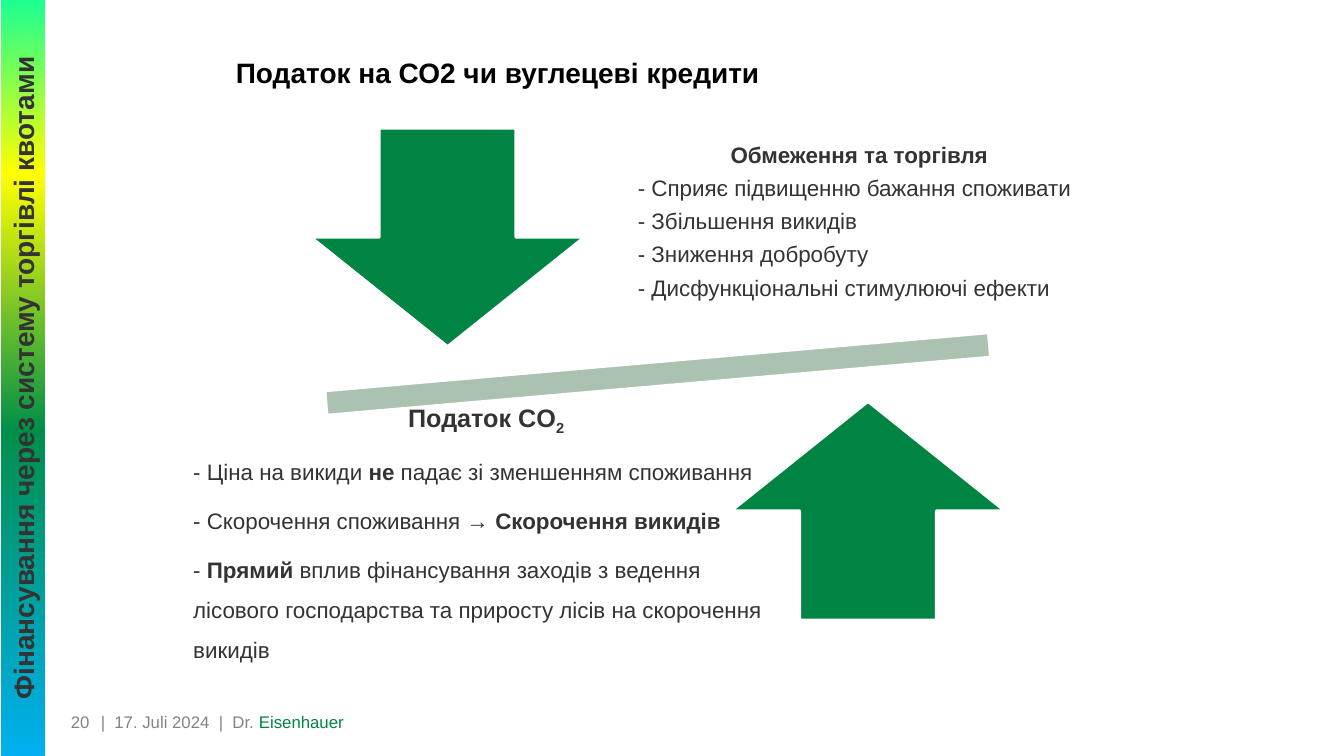
from copy import deepcopy

from pptx import Presentation
from pptx.dml.color import RGBColor
from pptx.enum.shapes import MSO_SHAPE as Shape
from pptx.enum.text import MSO_ANCHOR as Anchor, PP_ALIGN as Align
from pptx.oxml.ns import qn
from pptx.util import Pt

BLACK = RGBColor(0x00, 0x00, 0x00)
WHITE = RGBColor(0xFF, 0xFF, 0xFF)
DARK = RGBColor(0x33, 0x33, 0x33)
GREY = RGBColor(0x82, 0x84, 0x80)
GREEN = RGBColor(0x00, 0x84, 0x44)
SAGE = RGBColor(0xAB, 0xC2, 0xB0)
SIDEBAR_STOPS = [
    (0, RGBColor(0x00, 0xB0, 0xF0)),
    (0.43, RGBColor(0x00, 0x8F, 0x4A)),
    (0.77, RGBColor(0xFF, 0xFF, 0x00)),
    (1, RGBColor(0x1C, 0xFF, 0x91)),
]
SLIDE_WIDTH, SLIDE_HEIGHT = 960, 540

TRADE_LINES = [
    "- Сприяє підвищенню бажання споживати",
    "- Збільшення викидів",
    "- Зниження добробуту",
    "- Дисфункціональні стимулюючі ефекти",
]
TAX_LINES = [
    [("- Ціна на викиди ", False), ("не", True),
     (" падає зі зменшенням споживання", False)],
    [("- Скорочення споживання → ", False), ("Скорочення викидів", True)],
    [("- ", False), ("Прямий ", True),
     ("вплив фінансування заходів з ведення лісового господарства "
      "та приросту лісів на скорочення викидів", False)],
]


def add_span(para, text, size, color, bold=False):
    """Append a formatted run to a paragraph and return it."""
    span = para.add_run()
    span.text = text
    span.font.name = "Arial"
    span.font.size = Pt(size)
    span.font.bold = bold
    span.font.color.rgb = color
    return span


def add_text_box(page, box, anchor=Anchor.MIDDLE, inset=0):
    """Add an empty wrapping text box and return its frame."""
    frame = page.shapes.add_textbox(*map(Pt, box)).text_frame
    frame.word_wrap = True
    frame.vertical_anchor = anchor
    frame.margin_left = frame.margin_right = Pt(inset)
    frame.margin_top = frame.margin_bottom = Pt(inset)
    return frame


def space_paragraphs(frame, line_spacing, after):
    """Give all paragraphs of a frame the same spacing."""
    for para in frame.paragraphs:
        para.line_spacing = line_spacing
        para.space_after = Pt(after)


def add_filled_shape(page, kind, box, color, rotation=0):
    """Add a flat shape with a white outline."""
    shape = page.shapes.add_shape(kind, *map(Pt, box))
    shape.shadow.inherit = False
    shape.rotation = rotation
    shape.fill.solid()
    shape.fill.fore_color.rgb = color
    shape.line.color.rgb = WHITE
    shape.line.width = Pt(2)


def add_title(page, box):
    """Add the slide title."""
    para = add_text_box(page, box, Anchor.BOTTOM).paragraphs[0]
    add_span(para, "Податок на СО2 чи вуглецеві кредити", 20, BLACK, True)


def add_balance(page, box):
    """Add the tilted beam with an arrow pressing on each side."""
    left, top, width, height = box
    arrow_width, arrow_height = 195, 156
    beam_height = 74
    beam = (left, top + (height - beam_height) / 2, width, beam_height)
    down = (left + 76, top, arrow_width, arrow_height)
    up = (left + width - 76 - arrow_width, top + height - arrow_height,
          arrow_width, arrow_height)
    add_filled_shape(page, Shape.MATH_MINUS, beam, SAGE, 355)
    add_filled_shape(page, Shape.DOWN_ARROW, down, GREEN)
    add_filled_shape(page, Shape.UP_ARROW, up, GREEN)


def add_trade_panel(page, box):
    """Add the cap-and-trade arguments."""
    frame = add_text_box(page, box, inset=8.64)
    heading = frame.paragraphs[0]
    heading.alignment = Align.CENTER
    add_span(heading, "Обмеження та торгівля", 16, DARK, True)
    for line in TRADE_LINES:
        add_span(frame.add_paragraph(), line, 16, DARK)
    space_paragraphs(frame, 0.9, 6.4)


def add_tax_panel(page, box):
    """Add the carbon tax arguments."""
    frame = add_text_box(page, box, inset=10)
    heading = frame.paragraphs[0]
    heading.alignment = Align.CENTER
    add_span(heading, "Податок CO", 18, DARK, True)
    subscript = add_span(heading, "2", 18, DARK, True)
    subscript._r.get_or_add_rPr().set("baseline", "-25000")
    for line in TAX_LINES:
        para = frame.add_paragraph()
        for text, bold in line:
            add_span(para, text, 16, DARK, bold)
    space_paragraphs(frame, 1.5, 6)


def add_footer(page, box):
    """Add the page number, date and author."""
    left, top, width, height = box
    number = add_text_box(page, (left, top, 64, height)).paragraphs[0]
    number.alignment = Align.RIGHT
    add_span(number, "20", 12, GREY)
    author = add_text_box(page, (left + 72, top, width - 72, height)).paragraphs[0]
    add_span(author, "|  17. Juli 2024  |  Dr. ", 12, GREY)
    add_span(author, "Eisenhauer", 12, GREEN)


def add_sidebar(page, box):
    """Add the gradient strip with its vertical caption."""
    left, top, width, height = box
    middle_x, middle_y = left + width / 2, top + height / 2
    turned = (middle_x - height / 2, middle_y - width / 2, height, width)
    strip = page.shapes.add_shape(Shape.RECTANGLE, *map(Pt, turned))
    strip.shadow.inherit = False
    strip.rotation = 270
    strip.line.fill.background()
    strip.fill.gradient()
    strip.fill.gradient_angle = 0
    stop_list = strip._element.spPr.find(".//" + qn("a:gsLst"))
    for _ in range(len(SIDEBAR_STOPS) - len(stop_list)):
        stop_list.append(deepcopy(stop_list[0]))
    for stop, (position, color) in zip(strip.fill.gradient_stops, SIDEBAR_STOPS):
        stop.position = position
        stop.color.rgb = color
    frame = strip.text_frame
    frame.vertical_anchor = Anchor.MIDDLE
    para = frame.paragraphs[0]
    para.alignment = Align.CENTER
    add_span(para, "Фінансування через систему торгівлі квотами", 20, DARK, True)


def main():
    """Build and save the slide."""
    deck = Presentation()
    deck.slide_width, deck.slide_height = Pt(SLIDE_WIDTH), Pt(SLIDE_HEIGHT)
    page = deck.slides.add_slide(deck.slide_layouts[6])
    add_title(page, (168.5, 23, 524, 41))
    add_balance(page, (146.2, 91.5, 647.3, 351.3))
    add_trade_panel(page, (447, 77, 333.5, 164))
    add_tax_panel(page, (128, 259, 438.5, 231))
    add_footer(page, (0, 490.5, 548.5, 49.5))
    add_sidebar(page, (0.5, 0, 31.7, SLIDE_HEIGHT))
    deck.save("out.pptx")


if __name__ == "__main__":
    main()
